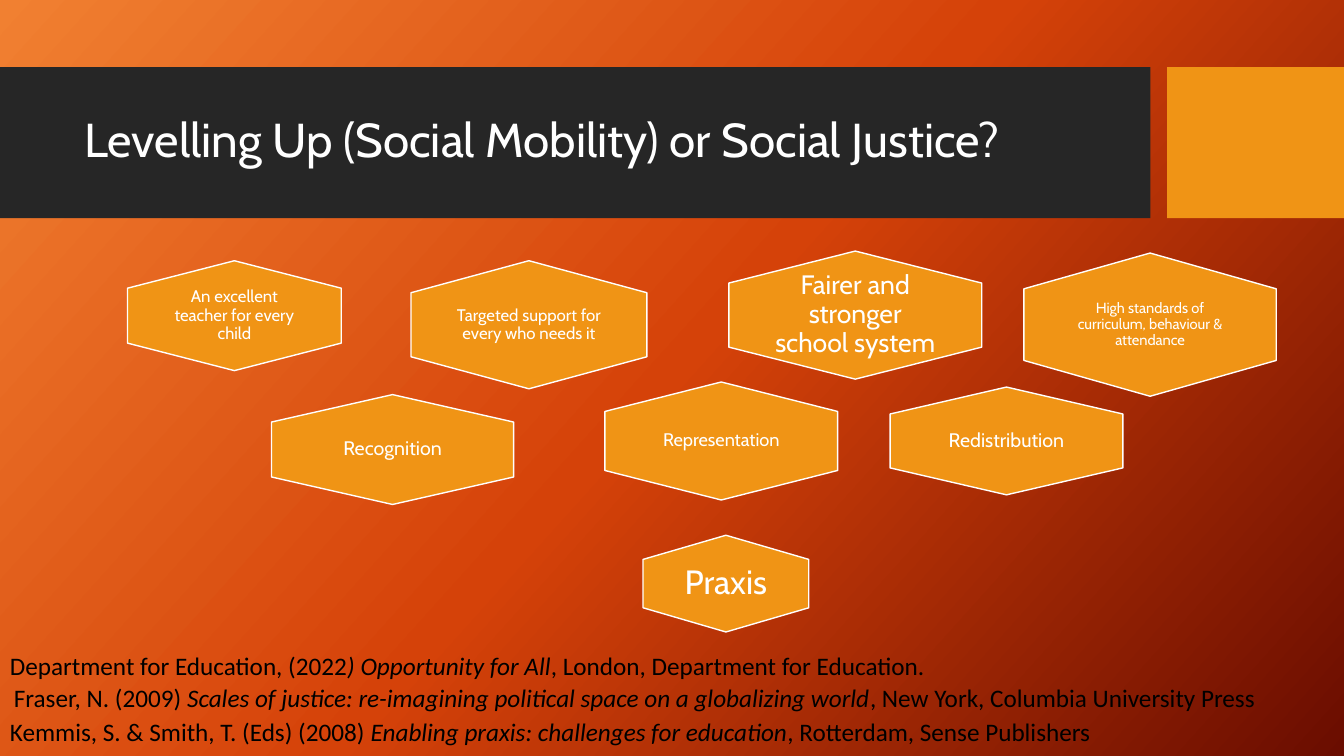
from copy import deepcopy
from dataclasses import dataclass

from pptx import Presentation
from pptx.dml.color import RGBColor
from pptx.enum.shapes import MSO_SHAPE as Preset
from pptx.enum.text import MSO_ANCHOR as Anchor, PP_ALIGN as Align
from pptx.oxml.ns import qn
from pptx.util import Pt


@dataclass(frozen=True)
class Theme:
    accent: str = "F09415"
    band: str = "262626"
    light: str = "FFFFFF"
    dark: str = "000000"
    gradient: tuple = ((0, "F18031"), (0.5, "D54209"), (1, "6A0D00"))
    gradient_angle: int = 42
    main_font: str = "Cabin"
    reference_font: str = "Calibri"
    title_size: float = 34
    reference_size: float = 18


class SlideBuilder:
    def __init__(self, slide, theme):
        self.slide = slide
        self.theme = theme

    def background(self):
        fill = self.slide.background.fill
        fill.gradient()
        fill.gradient_angle = 360 - self.theme.gradient_angle
        stop_list = self.slide.element.find(".//" + qn("a:gsLst"))
        stop_list.insert(1, deepcopy(stop_list[0]))
        for stop, (position, color) in zip(fill.gradient_stops, self.theme.gradient):
            stop.position = position
            stop.color.rgb = RGBColor.from_string(color)

    def shape(self, preset, left, top, width, height, color):
        shape = self.slide.shapes.add_shape(
            preset, Pt(left), Pt(top), Pt(width), Pt(height))
        shape.shadow.inherit = False
        shape.fill.solid()
        shape.fill.fore_color.rgb = RGBColor.from_string(color)
        shape.line.fill.background()
        return shape

    def text(self, box, runs, size, font, color, align=Align.LEFT,
             line_spacing=1.0, inset=None):
        """Add one paragraph; box is (left, top, width, height), runs are (text, italic)."""
        frame = self.slide.shapes.add_textbox(*map(Pt, box)).text_frame
        frame.word_wrap = True
        frame.vertical_anchor = Anchor.MIDDLE
        if inset is not None:
            frame.margin_left = frame.margin_right = Pt(inset)
            frame.margin_top = frame.margin_bottom = Pt(inset)
        paragraph = frame.paragraphs[0]
        paragraph.alignment = align
        paragraph.line_spacing = line_spacing
        for content, italic in runs:
            run = paragraph.add_run()
            run.text = content
            run.font.size = Pt(size)
            run.font.name = font
            run.font.italic = italic
            run.font.color.rgb = RGBColor.from_string(color)

    def title(self, content):
        self.text((53.3, 59, 756.7, 85), [(content, False)], self.theme.title_size,
                  self.theme.main_font, self.theme.light, line_spacing=0.9)

    def hexagon(self, label, center_x, center_y, width, height, size, inset):
        """Draw an upright hexagon and a level label two thirds of its size."""
        shape = self.shape(Preset.HEXAGON, center_x - height / 2, center_y - width / 2,
                           height, width, self.theme.accent)
        shape.rotation = 90
        shape.adjustments[0] = 0.25
        shape.line.color.rgb = RGBColor.from_string(self.theme.light)
        shape.line.width = Pt(1)
        box = (center_x - width / 3, center_y - height / 3, width * 2 / 3, height * 2 / 3)
        self.text(box, [(label, False)], size, self.theme.main_font, self.theme.light,
                  Align.CENTER, 0.9, inset)

    def reference(self, left, top, width, authors, work, publisher, align=Align.LEFT):
        runs = [(authors, False), (work, True), (publisher, False)]
        self.text((left, top, width, 28.8), runs, self.theme.reference_size,
                  self.theme.reference_font, self.theme.dark, align)


# label, center x, center y, width, height, type size, inset
HEXAGONS = [
    ("Redistribution", 718.9, 315, 166.3, 77, 14, 4.2),
    ("An excellent teacher for every child", 167.4, 225.5, 152.7, 78.5, 12, 0),
    ("Recognition", 280.4, 321.1, 173, 78.5, 14, 4.2),
    ("High standards of curriculum, behaviour & attendance",
     821.5, 231.9, 180.3, 102.3, 10.5, 0),
    ("Representation", 515.2, 315, 166.3, 84.3, 13, 3.9),
    ("Targeted support for every who needs it", 377.8, 232, 168.5, 91.5, 12, 0),
    ("Praxis", 518.5, 416.9, 118.4, 69.1, 24, 7.2),
    ("Fairer and stronger school system", 610.9, 225.1, 180.7, 91.5, 19, 0),
]

REFERENCES = [
    (-7.9, 484, 911.5, "Fraser, N. (2009) ",
     "Scales of justice: re-imagining political space on a globalizing world",
     ", New York, Columbia University Press", Align.RIGHT),
    (0, 461, 709, "Department for Education, (2022", ") Opportunity for All",
     ", London, Department for Education."),
    (0, 508.3, 805.7, "Kemmis, S. & Smith, T. (Eds) (2008) ",
     "Enabling praxis: challenges for education",
     ", Rotterdam, Sense Publishers"),
]


def main():
    presentation = Presentation()
    presentation.slide_width, presentation.slide_height = Pt(960), Pt(540)
    slide = presentation.slides.add_slide(presentation.slide_layouts[6])
    theme = Theme()
    builder = SlideBuilder(slide, theme)
    builder.background()
    builder.shape(Preset.RECTANGLE, 0, 48, 821.7, 107.8, theme.band)
    builder.shape(Preset.RECTANGLE, 833.7, 48, 126.3, 107.8, theme.accent)
    builder.title("Levelling Up (Social Mobility) or Social Justice?")
    for hexagon in HEXAGONS:
        builder.hexagon(*hexagon)
    for reference in REFERENCES:
        builder.reference(*reference)
    presentation.save("out.pptx")


if __name__ == "__main__":
    main()
